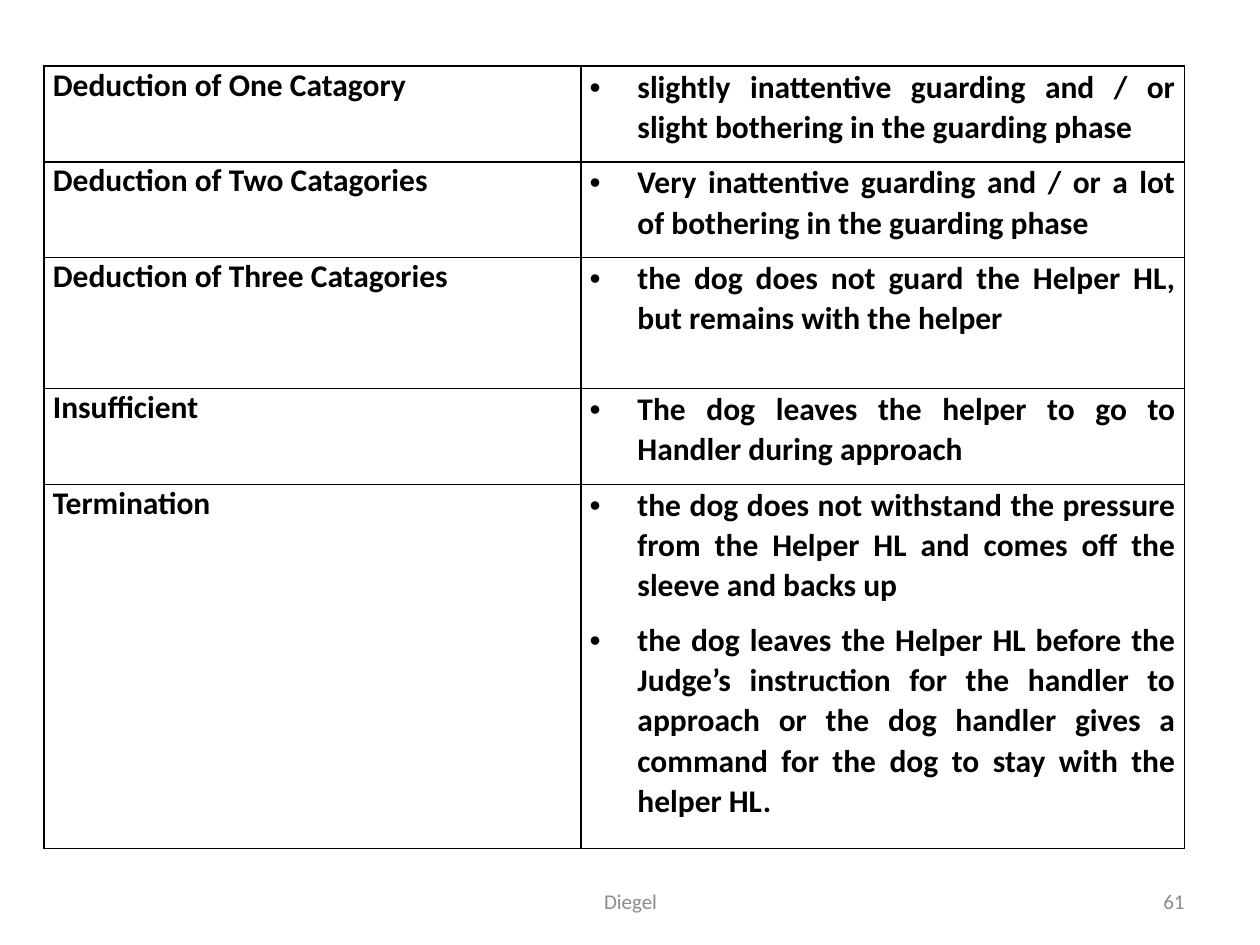
import pptx
import pptx.dml.color
import pptx.enum.text
import pptx.oxml
import pptx.oxml.ns
import pptx.util

ALIGN = pptx.enum.text.PP_ALIGN
ANCHOR = pptx.enum.text.MSO_ANCHOR
WIDTH, HEIGHT = pptx.util.Inches(10), pptx.util.Inches(7.5)


class Theme:
    font = "Calibri"
    ink = pptx.dml.color.RGBColor(0, 0, 0)
    muted = pptx.dml.color.RGBColor(0x8C, 0x8C, 0x8C)
    body_size = pptx.util.Pt(18)
    footer_size = pptx.util.Pt(12)
    rule = pptx.util.Pt(1)
    indent = pptx.util.Inches(0.38)
    padding = pptx.util.Inches(0.07)


LABEL = {"alignment": ALIGN.JUSTIFY, "space_after": pptx.util.Pt(10)}
BULLET = {"alignment": ALIGN.JUSTIFY, "space_after": pptx.util.Pt(8), "line_spacing": 1.05}

COLUMNS = [4.26, 4.79]
# Row height in inches, rating, faults
RATINGS = [
    (0.76, "Deduction of One Catagory",
     ["slightly inattentive guarding and / or slight bothering in the guarding phase"]),
    (0.76, "Deduction of Two Catagories",
     ["Very inattentive guarding and / or a lot of bothering in the guarding phase"]),
    (1.04, "Deduction of Three Catagories",
     ["the dog does not guard the Helper HL, but remains with the helper"]),
    (0.76, "Insufficient",
     ["The dog leaves the helper to go to Handler during approach"]),
    (2.89, "Termination",
     ["the dog does not withstand the pressure from the Helper HL and comes off "
      "the sleeve and backs up",
      "the dog leaves the Helper HL before the Judge’s instruction for the handler "
      "to approach or the dog handler gives a command for the dog to stay with "
      "the helper HL."]),
]


def apply_format(target, values):
    for name, value in values.items():
        setattr(target, name, value)


def write(para, text, size, color, layout, bold=False):
    apply_format(para, layout)
    span = para.add_run()
    span.text = text
    apply_format(span.font, {"name": Theme.font, "size": size, "bold": bold})
    span.font.color.rgb = color


def add_bullet(para):
    properties = para._p.get_or_add_pPr()
    properties.set("marL", str(Theme.indent))
    properties.set("indent", str(-Theme.indent))
    for tag, name, value in (("a:buFont", "typeface", "Arial"), ("a:buChar", "char", "•")):
        mark = pptx.oxml.ns.qn(tag)
        properties.append(properties.makeelement(mark, {name: value}))


def add_borders(cell):
    properties = cell._tc.get_or_add_tcPr()
    for index, side in enumerate(("lnL", "lnR", "lnT", "lnB")):
        line = pptx.oxml.parse_xml(
            f'<a:{side} {pptx.oxml.ns.nsdecls("a")} w="{Theme.rule}">'
            f'<a:solidFill><a:srgbClr val="{Theme.ink}"/></a:solidFill></a:{side}>')
        properties.insert(index, line)


def fill_cell(cell, texts, layout, bulleted=False):
    apply_format(cell, {"margin_left": Theme.padding, "margin_right": Theme.padding,
                        "margin_top": 0, "margin_bottom": 0,
                        "vertical_anchor": ANCHOR.TOP})
    cell.fill.background()
    add_borders(cell)
    frame = cell.text_frame
    for index, text in enumerate(texts):
        para = frame.add_paragraph() if index else frame.paragraphs[0]
        write(para, text, Theme.body_size, Theme.ink, layout, bold=True)
        if bulleted:
            add_bullet(para)


def add_ratings(page):
    heights = [height for height, _, _ in RATINGS]
    table = page.shapes.add_table(
        len(RATINGS), len(COLUMNS), int(WIDTH * 0.035), int(HEIGHT * 0.07),
        pptx.util.Inches(sum(COLUMNS)), pptx.util.Inches(sum(heights))).table
    apply_format(table, {"first_row": False, "horz_banding": False})
    for column, width in zip(table.columns, COLUMNS):
        column.width = pptx.util.Inches(width)
    for row, (height, rating, faults) in zip(table.rows, RATINGS):
        row.height = pptx.util.Inches(height)
        fill_cell(row.cells[0], [rating], LABEL)
        fill_cell(row.cells[1], faults, BULLET, bulleted=True)


def add_footer(page, text, left, width, alignment):
    box = page.shapes.add_textbox(int(WIDTH * left), pptx.util.Inches(6.95),
                                  int(WIDTH * width), pptx.util.Inches(0.4))
    frame = box.text_frame
    apply_format(frame, {"word_wrap": True, "vertical_anchor": ANCHOR.MIDDLE})
    write(frame.paragraphs[0], text, Theme.footer_size, Theme.muted,
          {"alignment": alignment})


def main():
    deck = pptx.Presentation()
    apply_format(deck, {"slide_width": WIDTH, "slide_height": HEIGHT})
    page = deck.slides.add_slide(deck.slide_layouts[6])

    # Footer and page number
    add_footer(page, "Diegel", 0.342, 0.317, ALIGN.CENTER)
    add_footer(page, "61", 0.717, 0.233, ALIGN.RIGHT)

    # Ratings table
    add_ratings(page)
    deck.save("out.pptx")


if __name__ == "__main__":
    main()
